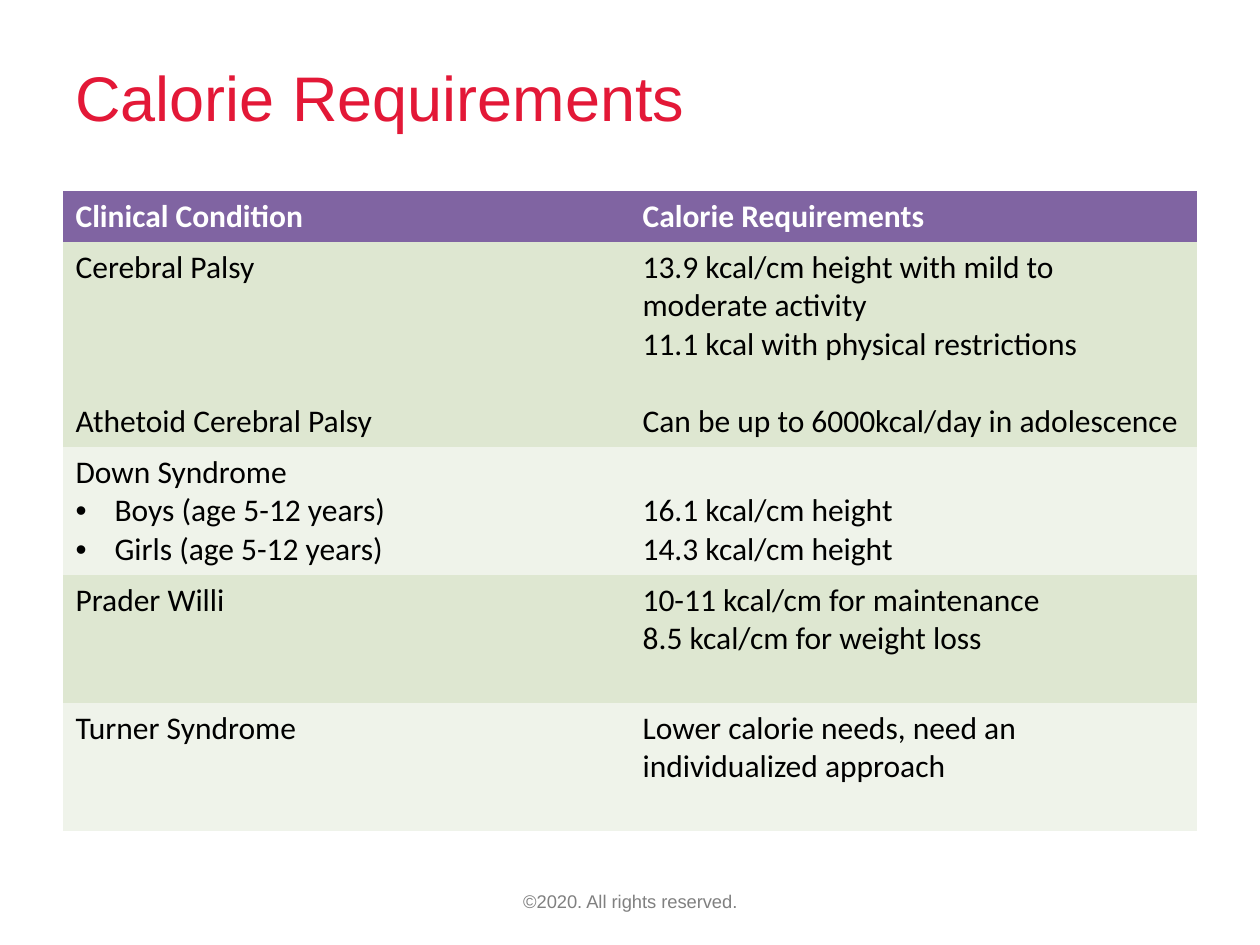
from dataclasses import dataclass

from lxml import etree
from pptx import Presentation
from pptx.dml.color import RGBColor
from pptx.enum.text import MSO_ANCHOR, PP_ALIGN
from pptx.oxml.ns import qn
from pptx.util import Emu, Pt

TOP, MIDDLE, BOTTOM = MSO_ANCHOR.TOP, MSO_ANCHOR.MIDDLE, MSO_ANCHOR.BOTTOM
LEFT, CENTER = PP_ALIGN.LEFT, PP_ALIGN.CENTER
PLAIN_TABLE = "{2D5ABB26-0587-4C30-8999-92F81FD0307C}"
EMU_PER_PX = 914400 / 126


def px(length):
    return Emu(round(length * EMU_PER_PX))


@dataclass(frozen=True)
class Theme:
    title: str = "E31837"
    header: str = "8064A2"
    bands: tuple = ("DEE7D1", "EFF3EA")
    text: str = "000000"
    light: str = "FFFFFF"
    muted: str = "808080"
    heading_font: str = "Arial"
    table_font: str = "Calibri"
    title_size: float = 36
    table_size: float = 18
    footer_size: float = 10.5


@dataclass(frozen=True)
class Line:
    text: str
    gap: int = 0
    bullet: bool = False


class SlideBuilder:
    def __init__(self, page, theme):
        self.page = page
        self.theme = theme

    def fill_frame(self, frame, lines, color, align=LEFT, **font):
        for index, line in enumerate(lines):
            para = frame.paragraphs[0] if index == 0 else frame.add_paragraph()
            if line.bullet:
                self.add_bullet(para)
            para.alignment = align
            if line.gap:
                para.space_before = Pt(line.gap)
            span = para.add_run()
            span.text = line.text
            for name, value in font.items():
                setattr(span.font, name, value)
            span.font.color.rgb = RGBColor.from_string(color)

    def add_bullet(self, para):
        properties = para._p.get_or_add_pPr()
        indent = px(39)
        properties.set("marL", str(indent))
        properties.set("indent", str(-indent))
        etree.SubElement(properties, qn("a:buFont")).set("typeface", "Arial")
        etree.SubElement(properties, qn("a:buChar")).set("char", "•")

    def text(self, area, content, color, size, align=LEFT):
        box = self.page.shapes.add_textbox(*map(px, area))
        frame = box.text_frame
        frame.word_wrap = True
        frame.vertical_anchor = MIDDLE
        self.fill_frame(frame, [Line(content)], color, align,
                        name=self.theme.heading_font, size=Pt(size))

    def cell(self, cell, lines, fill, color, bold, anchor):
        cell.fill.solid()
        cell.fill.fore_color.rgb = RGBColor.from_string(fill)
        cell.vertical_anchor = anchor
        self.fill_frame(cell.text_frame, lines, color,
                        name=self.theme.table_font,
                        size=Pt(self.theme.table_size), bold=bold)

    def table(self, left, top, widths, heights, rows, anchors):
        area = (left, top, sum(widths), sum(heights))
        table = self.page.shapes.add_table(
            len(rows), len(widths), *map(px, area)).table
        table.horz_banding = False
        table._tbl.tblPr.find(qn("a:tableStyleId")).text = PLAIN_TABLE
        for column, width in zip(table.columns, widths):
            column.width = px(width)
        for index, (row, height) in enumerate(zip(rows, heights)):
            table.rows[index].height = px(height)
            header = index == 0
            fill = self.theme.header if header else self.theme.bands[(index - 1) % 2]
            color = self.theme.light if header else self.theme.text
            for column, lines in enumerate(row):
                self.cell(table.cell(index, column), lines, fill, color,
                          header, anchors.get((index, column), TOP))


REQUIREMENTS = [
    ([Line("Clinical Condition")], [Line("Calorie Requirements")]),
    ([Line("Cerebral Palsy"), Line("Athetoid Cerebral Palsy", gap=66)],
     [Line("13.9 kcal/cm height with mild to moderate activity"),
      Line("11.1 kcal with physical restrictions"),
      Line("Can be up to 6000kcal/day in adolescence", gap=22)]),
    ([Line("Down Syndrome"),
      Line("Boys (age 5-12 years)", bullet=True),
      Line("Girls (age 5-12 years)", bullet=True)],
     [Line("16.1 kcal/cm height"), Line("14.3 kcal/cm height")]),
    ([Line("Prader Willi")],
     [Line("10-11 kcal/cm for maintenance"),
      Line("8.5 kcal/cm for weight loss")]),
    ([Line("Turner Syndrome")],
     [Line("Lower calorie needs, need an individualized approach")]),
]


def main():
    deck = Presentation()
    deck.slide_width, deck.slide_height = px(1260), px(945)
    theme = Theme()
    builder = SlideBuilder(deck.slides.add_slide(deck.slide_layouts[6]), theme)
    builder.text((63, 38, 1043, 116), "Calorie Requirements",
                 theme.title, theme.title_size)
    builder.table(63, 191, [567] * 2, [51, 205] + [128] * 3,
                  REQUIREMENTS, {(2, 1): BOTTOM})
    builder.text((431, 876, 399, 50), "©2020. All rights reserved.",
                 theme.muted, theme.footer_size, CENTER)
    deck.save("out.pptx")


if __name__ == "__main__":
    main()
